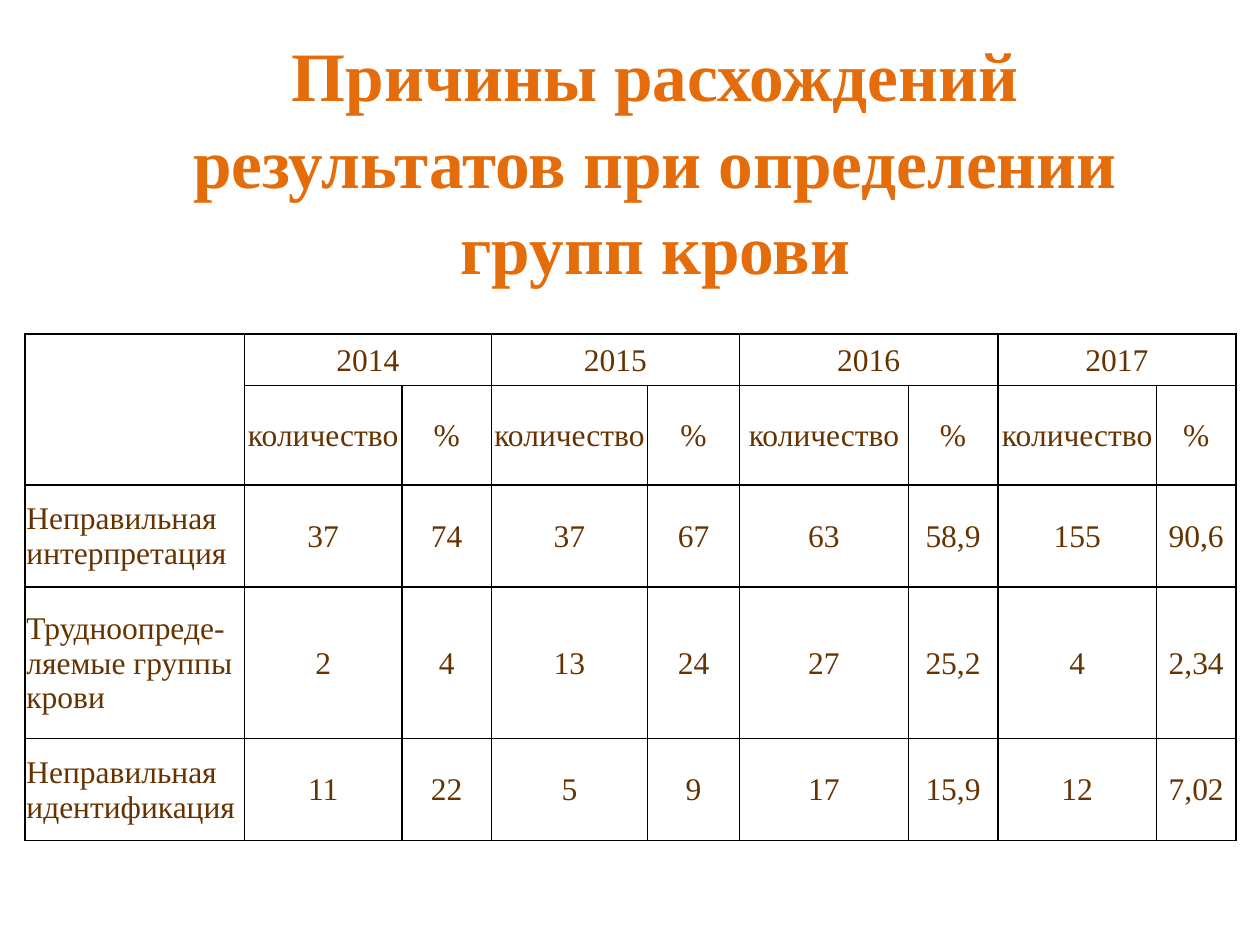
from pptx import Presentation
from pptx.dml.color import RGBColor
from pptx.enum.text import MSO_ANCHOR, PP_ALIGN
from pptx.oxml import parse_xml
from pptx.oxml.ns import nsdecls
from pptx.util import Inches, Pt

ORANGE = RGBColor(0xE4, 0x6C, 0x0A)
BROWN = RGBColor(0x66, 0x33, 0x00)
WHITE = RGBColor(0xFF, 0xFF, 0xFF)
BORDER = "000000"
FONT = "Times New Roman"
MIDDLE = MSO_ANCHOR.MIDDLE
CENTER, LEFT = PP_ALIGN.CENTER, PP_ALIGN.LEFT

TITLE = "Причины расхождений результатов при определении групп крови"
YEARS = ["2014", "2015", "2016", "2017"]
CAUSES = [
    ["Неправильная интерпретация", "37", "74", "37", "67", "63", "58,9", "155", "90,6"],
    ["Трудноопреде-ляемые группы крови", "2", "4", "13", "24", "27", "25,2", "4", "2,34"],
    ["Неправильная идентификация", "11", "22", "5", "9", "17", "15,9", "12", "7,02"],
]
COL_WIDTHS = [1.74, 1.25, 0.71, 1.24, 0.73, 1.34, 0.71, 1.26, 0.63]
ROW_HEIGHTS = [0.41, 0.79, 0.81, 1.2, 0.81]


def set_font(p, size, color, bold=False):
    p.font.name = FONT
    p.font.size = Pt(size)
    p.font.bold = bold
    p.font.color.rgb = color


def add_borders(cell):
    tc_pr = cell._tc.get_or_add_tcPr()
    for i, side in enumerate(("lnL", "lnR", "lnT", "lnB")):
        tc_pr.insert(i, parse_xml(
            f'<a:{side} {nsdecls("a")} w="12700"><a:solidFill>'
            f'<a:srgbClr val="{BORDER}"/></a:solidFill></a:{side}>'))


def format_cell(cell, text, align):
    cell.fill.solid()
    cell.fill.fore_color.rgb = WHITE
    cell.vertical_anchor = MIDDLE
    cell.margin_left = cell.margin_right = cell.margin_top = Inches(0.01)
    cell.margin_bottom = 0
    cell.text = text
    p = cell.text_frame.paragraphs[0]
    p.alignment = align
    set_font(p, 18, BROWN)
    add_borders(cell)


def place_title(slide, left, top, width, height):
    title = slide.shapes.title
    title.left, title.top = Inches(left), Inches(top)
    title.width, title.height = Inches(width), Inches(height)
    tf = title.text_frame
    tf.text = TITLE
    tf.word_wrap = True
    tf.vertical_anchor = MIDDLE
    p = tf.paragraphs[0]
    p.alignment = CENTER
    p.line_spacing = 1.04
    set_font(p, 39.6, ORANGE, bold=True)


def place_table(slide, left, top):
    # Two header rows: years over count and share
    year_row = [""] + [text for year in YEARS for text in (year, "")]
    unit_row = [""] + ["количество", "%"] * len(YEARS)
    rows = [year_row, unit_row] + CAUSES

    table = slide.shapes.add_table(
        len(rows), len(COL_WIDTHS), Inches(left), Inches(top),
        Inches(sum(COL_WIDTHS)), Inches(sum(ROW_HEIGHTS))).table
    for column, width in zip(table.columns, COL_WIDTHS):
        column.width = Inches(width)
    for row, height in zip(table.rows, ROW_HEIGHTS):
        row.height = Inches(height)

    for r, texts in enumerate(rows):
        for c, text in enumerate(texts):
            format_cell(table.cell(r, c), text, CENTER if c else LEFT)

    # Empty corner and one heading per year
    table.cell(0, 0).merge(table.cell(1, 0))
    for c in range(1, len(COL_WIDTHS), 2):
        table.cell(0, c).merge(table.cell(0, c + 1))


def main():
    prs = Presentation()
    prs.slide_width, prs.slide_height = Inches(10), Inches(7.5)
    slide = prs.slides.add_slide(prs.slide_layouts[5])
    place_title(slide, 0.83, 0.29, 8.74, 1.94)
    place_table(slide, 0.2, 2.65)
    prs.save("out.pptx")


if __name__ == "__main__":
    main()
